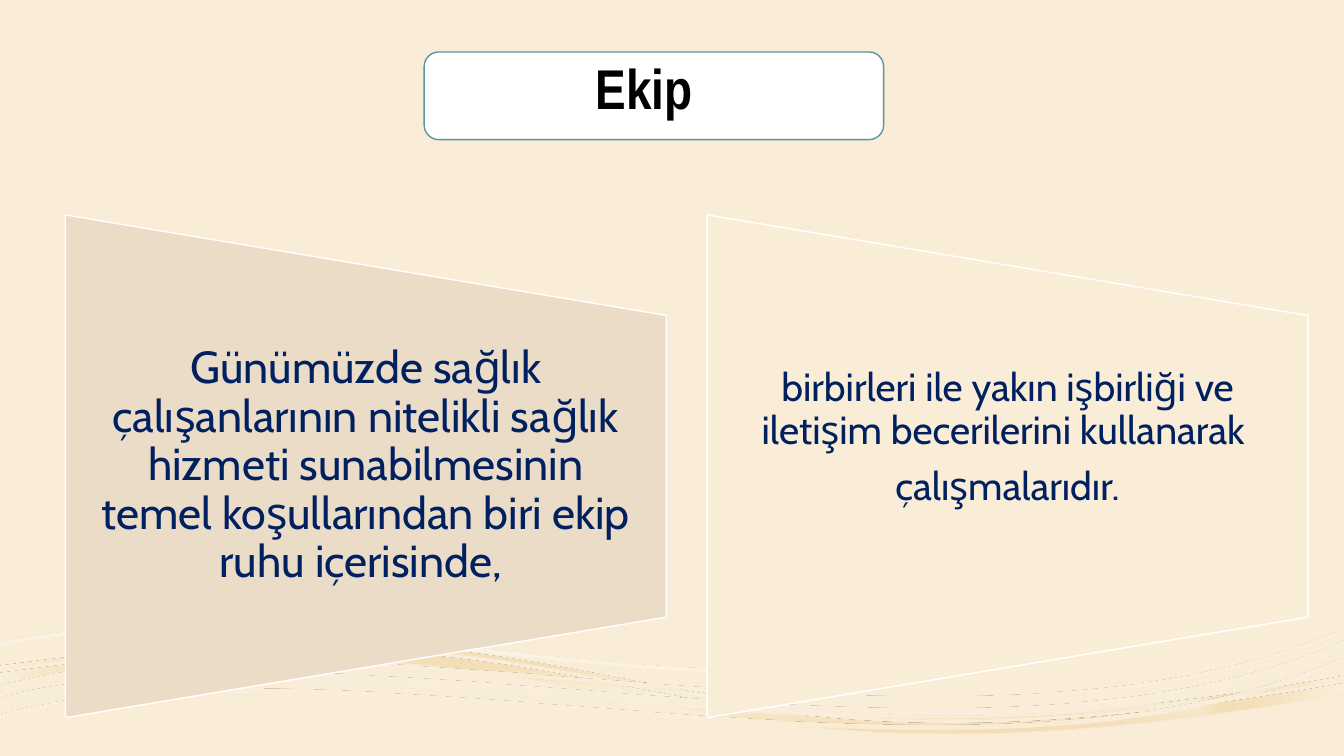
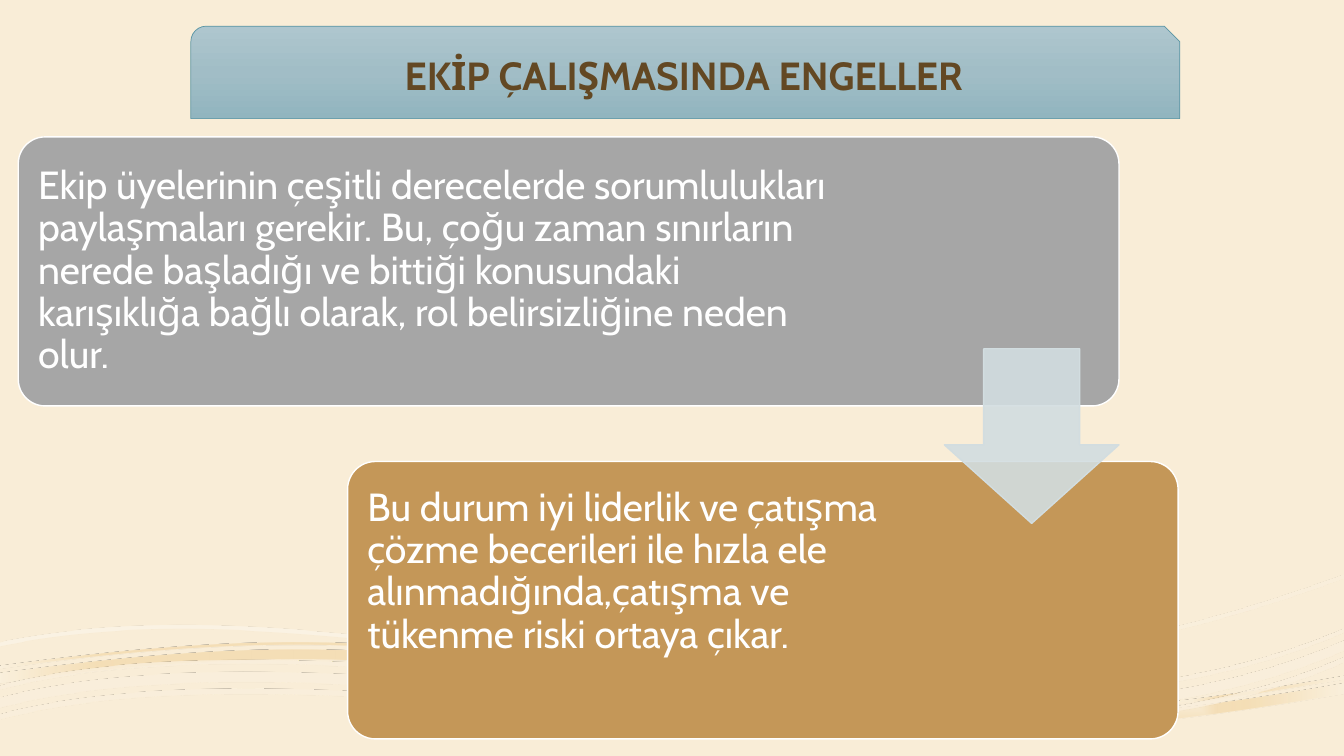
from math import cos, radians, sin

from lxml.etree import SubElement
from pptx import Presentation
from pptx.dml.color import RGBColor
from pptx.enum.shapes import MSO_SHAPE
from pptx.enum.text import MSO_ANCHOR, PP_ALIGN
from pptx.oxml.ns import qn
from pptx.util import Cm, Pt

CREAM, WHITE, TEAL, NAVY, MIST = "F9EDD7", "FFFFFF", "5A95A4", "002060", "D2DDE0"
BODY_FONT = "Cabin"


def paint(shape, fill, line=None, weight=1, opacity=100, angle=90, focus=None):
    """Fill with one colour, or with (position, colour, opacity) stops."""
    shape.shadow.inherit = False
    properties = shape._element.spPr
    if isinstance(fill, str):
        shape.fill.solid()
        shape.fill.fore_color.rgb = RGBColor.from_string(fill)
        if opacity < 100:
            colour = properties.find(".//" + qn("a:srgbClr"))
            SubElement(colour, qn("a:alpha"), val=str(opacity * 1000))
    else:
        shape.fill.gradient()
        gradient = properties.find(qn("a:gradFill"))
        gradient.clear()
        gradient.set("rotWithShape", "1")
        stops = SubElement(gradient, qn("a:gsLst"))
        for position, hex_colour, alpha in fill:
            stop = SubElement(stops, qn("a:gs"), pos=str(position * 1000))
            colour = SubElement(stop, qn("a:srgbClr"), val=hex_colour)
            if alpha < 100:
                SubElement(colour, qn("a:alpha"), val=str(alpha * 1000))
        if focus:
            kind, sides = focus
            shade = SubElement(gradient, qn("a:path"), path=kind)
            edges = {side: str(share * 1000) for side, share in zip("ltrb", sides)}
            SubElement(shade, qn("a:fillToRect"), **edges)
        else:
            SubElement(gradient, qn("a:lin"), ang=str(angle * 60000), scaled="0")
    if line:
        shape.line.color.rgb = RGBColor.from_string(line)
        shape.line.width = Pt(weight)
    else:
        shape.line.fill.background()


def write(box, texts, size, colour, insets, align=PP_ALIGN.LEFT,
          font=BODY_FONT, bold=False, spacing=0.9):
    """Write centred-in-height paragraphs; insets are left, top, right, bottom."""
    frame = box.text_frame
    frame.word_wrap = True
    frame.vertical_anchor = MSO_ANCHOR.MIDDLE
    (frame.margin_left, frame.margin_top,
     frame.margin_right, frame.margin_bottom) = map(Cm, insets)
    for index, text in enumerate(texts):
        para = frame.add_paragraph() if index else frame.paragraphs[0]
        para.text = text
        para.alignment = align
        para.line_spacing = spacing
        para.space_after = Pt(round(size * 0.35))
        para.font.name, para.font.size, para.font.bold = font, Pt(size), bold
        para.font.color.rgb = RGBColor.from_string(colour)


deck = Presentation()
deck.slide_width, deck.slide_height = Cm(33.87), Cm(19.05)
master = deck.slide_master
master.background.fill.solid()
master.background.fill.fore_color.rgb = RGBColor.from_string(CREAM)
team_page, barrier_page = [deck.slides.add_slide(deck.slide_layouts[6]) for _ in range(2)]

# Waves: Bezier edges in cm, with (top shift, bottom shift) for every strand
broad_top = [(0, 16.97), (3.15, 16.54), (5.64, 16.36), (7.77, 16.38),
             (17.02, 16.43), (18.75, 19.86), (33.86, 17.22)]
broad_bottom = [(0, 17.22), (16.94, 14.81), (15.29, 20.73), (33.86, 17.48)]
thin_edge = [(0, 16.18), (9.47, 14.2), (19.15, 19.91), (33.86, 14.48)]
triple_edge = [(0, 17.27), (8.92, 14.96), (24.33, 19.96), (33.86, 15.85)]
waves = [
    (broad_top, broad_bottom, [(0, 0), (-0.18, -0.36)],
     dict(fill=[(0, "FAF1DF", 90), (18, "F4DEB7", 100),
                (37, "F4DDB3", 90), (100, "FAF1DF", 100)],
          focus=("shape", (50, 50, 50, 50)))),
    (thin_edge, thin_edge, [(0, 0.1)],
     dict(fill=[(36, WHITE, 30), (100, CREAM, 48)], angle=45)),
    (triple_edge, triple_edge, [(0, 0.1), (0.3, 0.55), (0.71, 0.84)],
     dict(fill=[(36, WHITE, 47), (100, "FAEFDC", 82)],
          focus=("rect", (100, 100, 0, 0)))),
]
TILT = 3.5
turn = complex(cos(radians(TILT)), sin(radians(TILT)))
for top, bottom, strands, look in waves:
    builder = None
    for top_shift, bottom_shift in strands:
        outline = [complex(x, y + top_shift) for x, y in top]
        outline += [complex(x, y + bottom_shift) for x, y in reversed(bottom)]
        points = [(Cm((p * turn).real), Cm((p * turn).imag)) for p in outline]
        if builder is None:
            builder = team_page.shapes.build_freeform(*points[0], scale=1.0)
        else:
            builder.move_to(*points[0])
        builder.add_line_segments(points[1:], close=True)
    wave = builder.convert_to_shape()
    paint(wave, **look)

    # Join each three points of an edge into one curve; the edges meet in a line
    outline_path = wave._element.find(".//" + qn("a:pathLst"))[0]
    corner = len(top) - 1
    for node in list(outline_path):
        if node.tag == qn("a:moveTo"):
            index = 0
        elif node.tag == qn("a:lnTo"):
            if index != corner:
                if (index if index < corner else index - corner - 1) % 3 == 0:
                    curve = node
                    curve.tag = qn("a:cubicBezTo")
                else:
                    curve.append(node[0])
                    outline_path.remove(node)
            index += 1

    # Tilt it back into place and share it through the master
    middle = complex(wave.left + wave.width / 2, wave.top + wave.height / 2)
    move = middle / turn - middle
    wave.left, wave.top = round(wave.left + move.real), round(wave.top + move.imag)
    wave.rotation = -TILT
    master.shapes._spTree.append(wave._element)

# Team: title card
card = team_page.shapes.add_shape(
    MSO_SHAPE.ROUNDED_RECTANGLE, Cm(10.69), Cm(1.31), Cm(11.58), Cm(2.21))
paint(card, WHITE, TEAL)
title = team_page.shapes.add_textbox(Cm(11.2), Cm(1.31), Cm(10.57), Cm(1.98))
write(title, ["Ekip"], 40, "000000", (0.18, 0.18, 0.68, 0.18),
      PP_ALIGN.CENTER, "Arial Narrow", True)

# Team: two tapering panels, turned a quarter to the left
PANEL_WIDTH, PANEL_HEIGHT, PANEL_MIDDLE, TEXT_HEIGHT = 15.14, 12.67, 11.75, 7.59
panels = [
    (1.65, "EBDCC7", 32, (0.56, 0, 0.56, 0),
     ["Günümüzde sağlık çalışanlarının nitelikli sağlık hizmeti sunabilmesinin "
      "temel koşullarından biri ekip ruhu içerisinde, "]),
    (17.82, CREAM, 28, (0.48, 0, 0.48, 1.4),
     ["birbirleri ile yakın işbirliği ve iletişim becerilerini kullanarak ",
      "çalışmalarıdır."]),
]
for left, fill, size, insets, texts in panels:
    panel = team_page.shapes.add_shape(
        MSO_SHAPE.FLOWCHART_MANUAL_OPERATION,
        Cm(left + (PANEL_WIDTH - PANEL_HEIGHT) / 2), Cm(PANEL_MIDDLE - PANEL_WIDTH / 2),
        Cm(PANEL_HEIGHT), Cm(PANEL_WIDTH))
    panel.rotation = 270
    paint(panel, fill, WHITE)
    box = team_page.shapes.add_textbox(
        Cm(left), Cm(PANEL_MIDDLE - TEXT_HEIGHT / 2), Cm(PANEL_WIDTH), Cm(TEXT_HEIGHT))
    write(box, texts, size, NAVY, insets, PP_ALIGN.CENTER)

# Barriers: title banner
banner = barrier_page.shapes.add_shape(
    MSO_SHAPE.SNIP_ROUND_RECTANGLE, Cm(4.81), Cm(0.66), Cm(24.92), Cm(2.33))
paint(banner, [(0, "AEC6CE", 100), (50, "A1BDC6", 100), (100, "91B5BF", 100)], TEAL, 0.5)
write(banner, ["EKİP ÇALIŞMASINDA ENGELLER"], 28, "634823", (0.25, 0.13, 0.25, 0.13),
      PP_ALIGN.CENTER, bold=True, spacing=1.0)

# Barriers: cause and consequence
INSET = 0.2
stages = [
    (0.46, 3.45, 27.74, 6.78, "A6A6A6", 20.75, 0.3,
     "Ekip üyelerinin çeşitli derecelerde sorumlulukları paylaşmaları gerekir. "
     "Bu, çoğu zaman sınırların nerede başladığı ve bittiği konusundaki "
     "karışıklığa bağlı olarak, rol belirsizliğine neden olur."),
    (8.76, 11.63, 20.93, 6.99, "C49758", 13.51, 1.72,
     "Bu durum iyi liderlik ve çatışma çözme becerileri ile hızla ele "
     "alınmadığında,çatışma ve tükenme riski ortaya çıkar."),
]
for left, top, width, height, fill, text_width, bottom_inset, text in stages:
    stage = barrier_page.shapes.add_shape(
        MSO_SHAPE.ROUNDED_RECTANGLE, Cm(left), Cm(top), Cm(width), Cm(height))
    stage.adjustments[0] = 0.1
    paint(stage, fill, WHITE)
    box = barrier_page.shapes.add_textbox(
        Cm(left + INSET), Cm(top + INSET), Cm(text_width), Cm(height - 2 * INSET))
    write(box, [text], 28, WHITE, (0.3, 0.3, 0.3, bottom_inset))

# Barriers: arrow between the stages
arrow = barrier_page.shapes.add_shape(
    MSO_SHAPE.DOWN_ARROW, Cm(23.8), Cm(8.79), Cm(4.4), Cm(4.4))
arrow.adjustments[0], arrow.adjustments[1] = 0.55, 0.45
paint(arrow, MIST, MIST, opacity=90)

deck.save("out.pptx")
